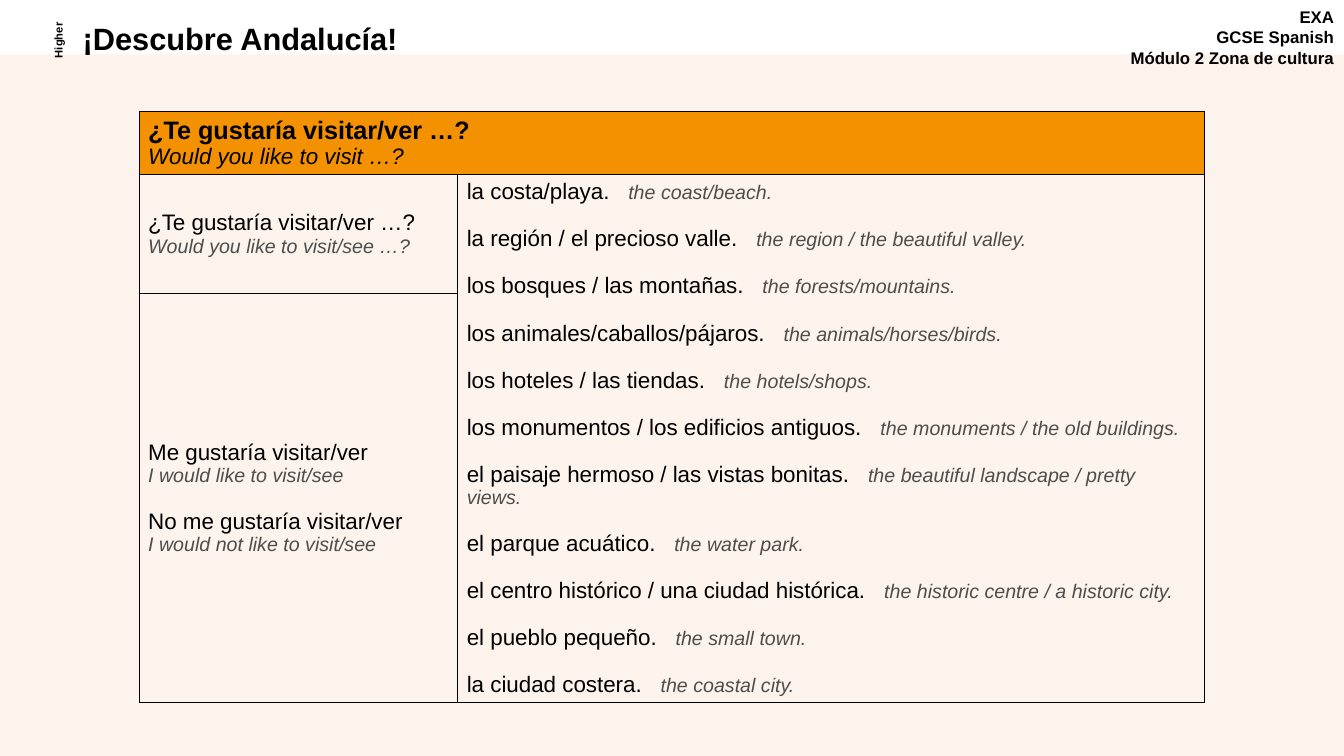
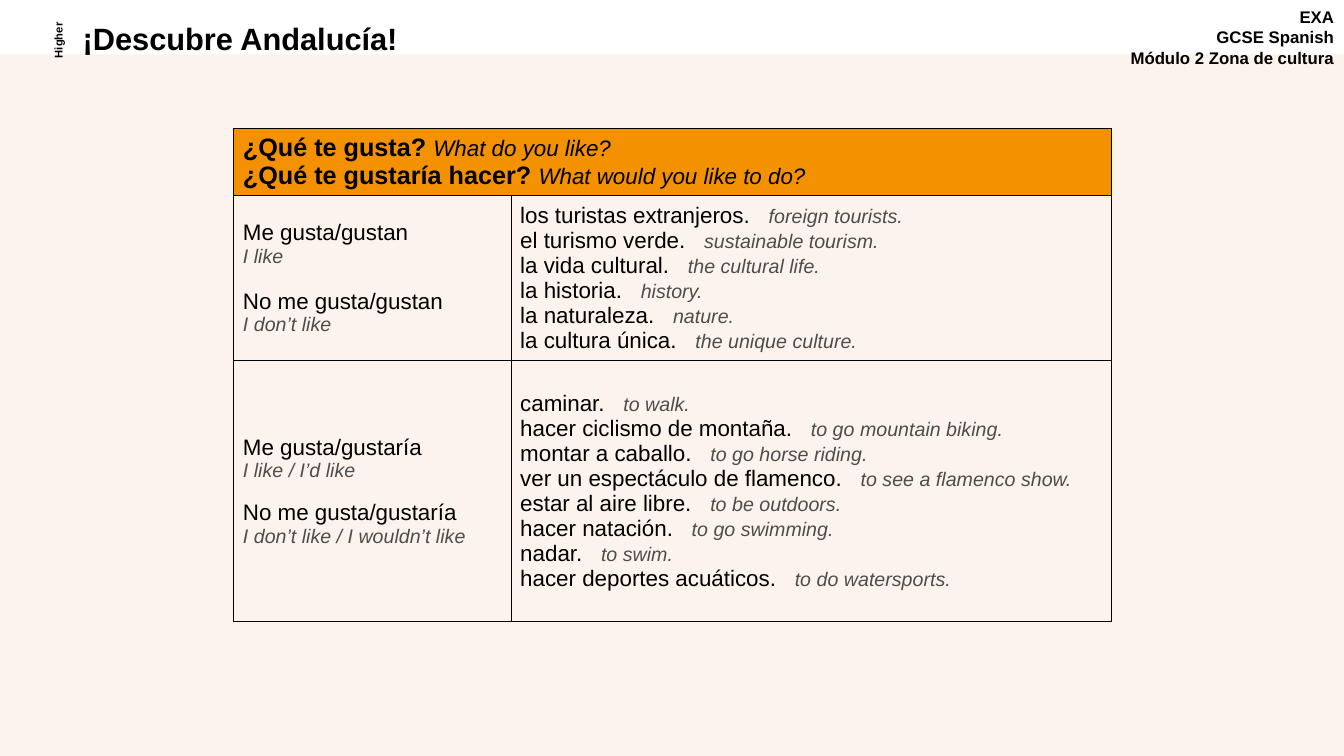
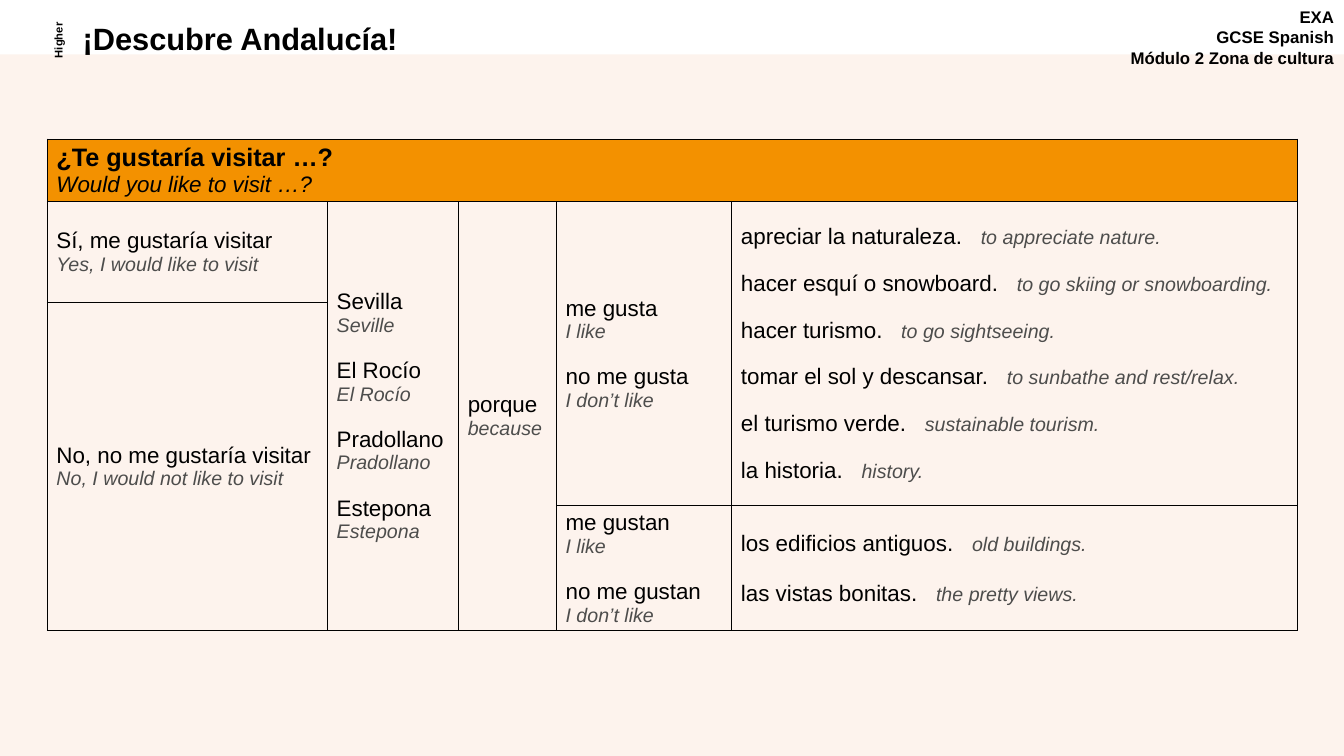
from dataclasses import dataclass

from lxml import etree
from pptx import Presentation
from pptx.dml.color import RGBColor
from pptx.enum.shapes import MSO_SHAPE
from pptx.enum.text import MSO_ANCHOR, MSO_AUTO_SIZE, PP_ALIGN
from pptx.oxml.ns import qn
from pptx.util import Inches, Pt

RECTANGLE = MSO_SHAPE.RECTANGLE
MIDDLE, TOP = MSO_ANCHOR.MIDDLE, MSO_ANCHOR.TOP
NO_AUTOFIT = MSO_AUTO_SIZE.NONE
LEFT, CENTER, RIGHT = PP_ALIGN.LEFT, PP_ALIGN.CENTER, PP_ALIGN.RIGHT
TITLE_ONLY = 5


@dataclass(frozen=True)
class Theme:
    font: str = "Arial"
    ink: str = "000000"
    translation: str = "4D4D4C"
    heading_fill: str = "F39100"
    band: str = "FDF3ED"
    title_size: int = 22
    heading_size: int = 18
    phrase_size: int = 16
    translation_size: int = 14
    course_size: int = 12
    tier_size: int = 8
    border: float = 0.75
    translation_gap: float = 8.9  # points added to the space before a translation
    phrase_gap: float = 15.64  # points between separated phrases


THEME = Theme()


@dataclass(frozen=True)
class Entry:
    """A table cell: (Spanish, English) phrases, stacked or side by side."""
    row: int
    col: int
    phrases: list
    stacked: bool = True
    gap: float = 0
    rows: int = 1
    cols: int = 1
    heading: bool = False


def write(paragraph, text, size, color=THEME.ink, bold=False, italic=False, tracking=0):
    run = paragraph.add_run()
    run.text = text
    font = run.font
    font.name, font.size = THEME.font, Pt(size)
    font.bold, font.italic = bold, italic
    font.color.rgb = RGBColor.from_string(color)
    if tracking:
        run._r.get_or_add_rPr().set("spc", str(round(tracking * 100)))


def next_paragraph(frame):
    """The first paragraph while it is empty, otherwise a new one."""
    first = frame.paragraphs[0]
    return frame.add_paragraph() if first.runs else first


def write_lines(frame, lines, size, align):
    frame.word_wrap = True
    frame.auto_size = NO_AUTOFIT
    frame.vertical_anchor = TOP
    for line in lines:
        paragraph = next_paragraph(frame)
        paragraph.alignment = align
        write(paragraph, line, size, bold=True)


def add_label(slide, box, lines, size, align, rotation=0):
    label = slide.shapes.add_textbox(*map(Inches, box))
    label.rotation = rotation
    write_lines(label.text_frame, lines, size, align)
    return label


def add_band(slide, box):
    band = slide.shapes.add_shape(RECTANGLE, *map(Inches, box))
    band.shadow.inherit = False
    band.fill.solid()
    band.fill.fore_color.rgb = RGBColor.from_string(THEME.band)
    band.line.fill.background()
    return band


def furnish_layout(layout, slide):
    """Draw the shared elements on a slide and move them to its layout."""
    shared = [
        add_band(slide, (0, 0.54, 13.33, 6.96)),
        add_label(slide, (10.95, 0.02, 2.38, 0.77),
                  ["EXA", "GCSE Spanish", "Módulo 2 Zona de cultura"],
                  THEME.course_size, RIGHT),
        add_label(slide, (0.18, 0.29, 0.78, 0.22), ["Higher"],
                  THEME.tier_size, CENTER, rotation=270),
    ]
    for shape in shared:
        layout.shapes.element.append(shape.element)


def set_title(slide, text):
    title = slide.shapes.title
    title.left, title.top, title.width, title.height = map(Inches, (0.72, 0.19, 6.88, 0.43))
    write_lines(title.text_frame, [text], THEME.title_size, LEFT)
    title.text_frame.paragraphs[0].line_spacing = 0.9


def draw_borders(cell):
    properties = cell._tc.get_or_add_tcPr()
    for index, side in enumerate(("lnL", "lnR", "lnT", "lnB")):
        line = etree.Element(qn(f"a:{side}"), w=str(Pt(THEME.border)))
        fill = etree.SubElement(line, qn("a:solidFill"))
        etree.SubElement(fill, qn("a:srgbClr"), val=THEME.ink)
        properties.insert(index, line)


def style_cell(cell):
    cell.fill.background()
    cell.vertical_anchor = MIDDLE
    cell.margin_left = cell.margin_right = Inches(0.09)
    cell.margin_top = cell.margin_bottom = Inches(0.04)
    draw_borders(cell)


def fill_entry(cell, entry):
    phrase = {"size": THEME.phrase_size}
    translation = {"size": THEME.translation_size, "color": THEME.translation, "italic": True}
    tracking = THEME.translation_gap
    if entry.heading:
        phrase = {"size": THEME.heading_size, "bold": True}
        translation = {"size": THEME.phrase_size, "italic": True}
        tracking = 0
        cell.fill.solid()
        cell.fill.fore_color.rgb = RGBColor.from_string(THEME.heading_fill)

    for index, (spanish, english) in enumerate(entry.phrases):
        paragraph = next_paragraph(cell.text_frame)
        if index and entry.gap:
            paragraph.space_before = Pt(entry.gap)
        write(paragraph, spanish, **phrase)
        if entry.stacked:
            paragraph = next_paragraph(cell.text_frame)
        else:
            write(paragraph, " ", tracking=tracking, **phrase)
        write(paragraph, english, **translation)


def add_phrase_table(slide, left, top, widths, heights, entries):
    frame = slide.shapes.add_table(
        len(heights), len(widths), Inches(left), Inches(top),
        Inches(sum(widths)), Inches(sum(heights)))
    table = frame.table
    table.first_row = table.horz_banding = False
    for column, width in zip(table.columns, widths):
        column.width = Inches(width)
    for row, height in zip(table.rows, heights):
        row.height = Inches(height)
    for cell in table.iter_cells():
        style_cell(cell)
    for entry in entries:
        cell = table.cell(entry.row, entry.col)
        if entry.rows > 1 or entry.cols > 1:
            cell.merge(table.cell(entry.row + entry.rows - 1, entry.col + entry.cols - 1))
        fill_entry(cell, entry)


GAP = THEME.phrase_gap

PLACES = dict(
    left=1.38, top=1.11, widths=[3.16, 7.41], heights=[0.62, 1.18, 4.06],
    entries=[
        Entry(0, 0, [("¿Te gustaría visitar/ver …?", "Would you like to visit …?")],
              cols=2, heading=True),
        Entry(1, 0, [("¿Te gustaría visitar/ver …?", "Would you like to visit/see …?")]),
        Entry(2, 0, [
            ("Me gustaría visitar/ver", "I would like to visit/see"),
            ("No me gustaría visitar/ver", "I would not like to visit/see"),
        ], gap=GAP),
        Entry(1, 1, [
            ("la costa/playa.", "the coast/beach."),
            ("la región / el precioso valle.", "the region / the beautiful valley."),
            ("los bosques / las montañas.", "the forests/mountains."),
            ("los animales/caballos/pájaros.", "the animals/horses/birds."),
            ("los hoteles / las tiendas.", "the hotels/shops."),
            ("los monumentos / los edificios antiguos.", "the monuments / the old buildings."),
            ("el paisaje hermoso / las vistas bonitas.",
             "the beautiful landscape / pretty views."),
            ("el parque acuático.", "the water park."),
            ("el centro histórico / una ciudad histórica.",
             "the historic centre / a historic city."),
            ("el pueblo pequeño.", "the small town."),
            ("la ciudad costera.", "the coastal city."),
        ], stacked=False, gap=15.85, rows=2),
    ])

LIKES = dict(
    left=2.32, top=1.27, widths=[2.75, 5.95], heights=[0.67, 1.64, 2.59],
    entries=[
        Entry(0, 0, [
            ("¿Qué te gusta?", "What do you like?"),
            ("¿Qué te gustaría hacer?", "What would you like to do?"),
        ], stacked=False, cols=2, heading=True),
        Entry(1, 0, [
            ("Me gusta/gustan", "I like"),
            ("No me gusta/gustan", "I don’t like"),
        ], gap=GAP),
        Entry(1, 1, [
            ("los turistas extranjeros.", "foreign tourists."),
            ("el turismo verde.", "sustainable tourism."),
            ("la vida cultural.", "the cultural life."),
            ("la historia.", "history."),
            ("la naturaleza.", "nature."),
            ("la cultura única.", "the unique culture."),
        ], stacked=False),
        Entry(2, 0, [
            ("Me gusta/gustaría", "I like / I’d like"),
            ("No me gusta/gustaría", "I don’t like / I wouldn’t like"),
        ], gap=13.4),
        Entry(2, 1, [
            ("caminar.", "to walk."),
            ("hacer ciclismo de montaña.", "to go mountain biking."),
            ("montar a caballo.", "to go horse riding."),
            ("ver un espectáculo de flamenco.", "to see a flamenco show."),
            ("estar al aire libre.", "to be outdoors."),
            ("hacer natación.", "to go swimming."),
            ("nadar.", "to swim."),
            ("hacer deportes acuáticos.", "to do watersports."),
        ], stacked=False),
    ])

REASONS = dict(
    left=0.47, top=1.38, widths=[2.78, 1.3, 0.97, 1.74, 5.61],
    heights=[0.62, 1, 2.02, 1.24],
    entries=[
        Entry(0, 0, [("¿Te gustaría visitar …?", "Would you like to visit …?")],
              cols=5, heading=True),
        Entry(1, 0, [("Sí, me gustaría visitar", "Yes, I would like to visit")]),
        Entry(2, 0, [("No, no me gustaría visitar", "No, I would not like to visit")], rows=2),
        Entry(1, 1, [
            ("Sevilla", "Seville"),
            ("El Rocío", "El Rocío"),
            ("Pradollano", "Pradollano"),
            ("Estepona", "Estepona"),
        ], gap=GAP, rows=3),
        Entry(1, 2, [("porque", "because")], rows=3),
        Entry(1, 3, [("me gusta", "I like"), ("no me gusta", "I don’t like")],
              gap=GAP, rows=2),
        Entry(1, 4, [
            ("apreciar la naturaleza.", "to appreciate nature."),
            ("hacer esquí o snowboard.", "to go skiing or snowboarding."),
            ("hacer turismo.", "to go sightseeing."),
            ("tomar el sol y descansar.", "to sunbathe and rest/relax."),
            ("el turismo verde.", "sustainable tourism."),
            ("la historia.", "history."),
        ], stacked=False, gap=GAP, rows=2),
        Entry(3, 3, [("me gustan", "I like"), ("no me gustan", "I don’t like")], gap=GAP),
        Entry(3, 4, [
            ("los edificios antiguos.", "old buildings."),
            ("las vistas bonitas.", "the pretty views."),
        ], stacked=False, gap=17.9),
    ])


def main():
    deck = Presentation()
    deck.slide_width, deck.slide_height = Inches(13.33), Inches(7.5)
    layout = deck.slide_layouts[TITLE_ONLY]
    slides = [deck.slides.add_slide(layout) for _ in range(3)]
    furnish_layout(layout, slides[0])
    for slide, phrase_table in zip(slides, (PLACES, LIKES, REASONS)):
        set_title(slide, "¡Descubre Andalucía!")
        add_phrase_table(slide, **phrase_table)
    deck.save("out.pptx")


if __name__ == "__main__":
    main()
